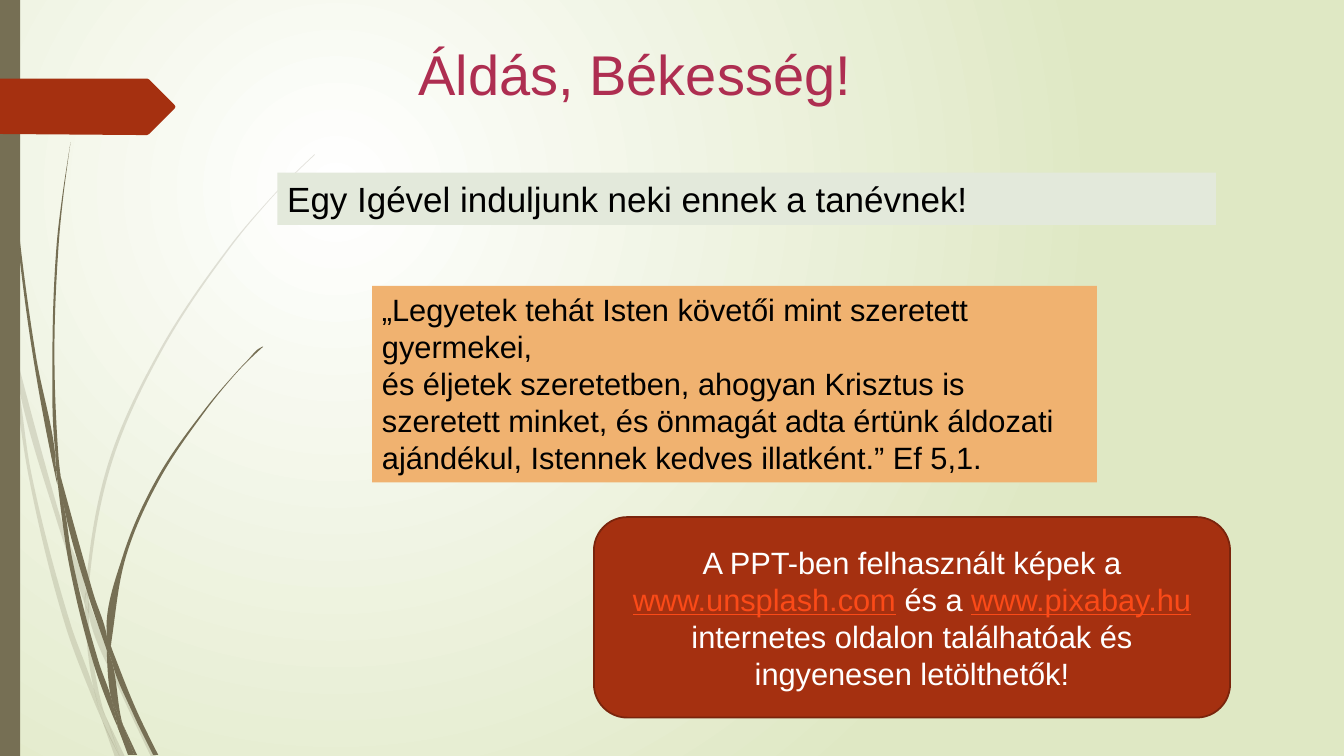
import math
from lxml import etree
from pptx import Presentation
from pptx import util as u
from pptx.dml.color import RGBColor
from pptx.enum import shapes, text
from pptx.oxml.ns import qn

# Theme: colours and type sizes
THEME = {
    "font": "Arial", "serif": "Times New Roman",
    "bark": "766F54", "rust": "A53010", "edge": "7A240C", "peach": "F0B270",
    "mist": "E3E9DB", "rose": "AE2E51", "link": "FB4A18",
    "ink": "000000", "white": "FFFFFF", "leaf": "DFE8C4",
    "title": 40, "lead": 25, "body": 22,
}

# Content: paragraphs are lists of (words, colour) runs
TITLE = [[(" ", "rose"), ("Áldás, Békesség!", "rose")]]
LEAD = [[("Egy Igével induljunk neki ennek a tanévnek!", "ink")]]
QUOTE = [
    [("„Legyetek tehát Isten követői mint szeretett gyermekei,", "ink")],
    [("és éljetek szeretetben, ahogyan Krisztus is szeretett minket, és önmagát "
      "adta értünk áldozati ajándékul, Istennek kedves illatként.” Ef 5,1.", "ink")],
]
NOTE = [[
    ("A PPT-ben felhasznált képek a ", "white"), ("www.unsplash.com", "link"),
    (" és a ", "white"), ("www.pixabay.hu", "link"),
    (" internetes oldalon találhatóak és ingyenesen letölthetők!", "white"),
]]

# Places: left, top, width, height in percent of the slide
WIDE, HIGH = u.Inches(13.33), u.Inches(7.5)
SPOT = {
    "bar": (0, 0, 1.5, 100),
    "title": (21.68, 4.53, 50.04, 10.27), "lead": (20.63, 22.83, 69.84, 6.93),
    "quote": (27.68, 37.8, 53.94, 26), "note": (44.19, 68.4, 47.34, 26.53),
}

# Outlines: x, y pairs in hundredths of an inch
FLAG = (0, 78, 146, 78, 148, 79, 173, 104, 174, 106, 173, 108, 148, 133, 146, 134,
        136, 134, 0, 133)
FAINT = [
    (11, 350, 9, 322, 0, 282, 0, 299, 10, 344),
    (58, 522, 84, 599, 85, 586, 62, 520, 14, 345, 17, 376),
    (92, 607, 88, 596, 88, 610, 123, 694, 150, 751, 155, 751, 127, 692),
    (119, 751, 124, 751, 105, 711),
    (93, 683, 70, 619, 31, 469, 17, 376, 11, 350, 28, 470, 65, 621, 92, 693,
     101, 714, 99, 707),
    (84, 599, 87, 646, 93, 683, 96, 692, 105, 711, 103, 706, 91, 646, 88, 610, 88, 608),
    (88, 584, 110, 462, 160, 349, 229, 245, 268, 198, 290, 175, 312, 154, 312, 153,
     289, 175, 268, 197, 228, 244, 158, 348, 107, 461, 85, 584, 85, 586, 88, 596),
    (101, 714, 114, 751, 119, 751),
    (88, 608, 88, 610, 88, 596, 85, 586, 84, 599),
    (96, 692, 93, 683, 99, 707, 101, 714, 119, 751, 105, 711),
]
SOLID = [
    (7, 110, 17, 233, 33, 355, 56, 477, 57, 481, 55, 457, 55, 453, 36, 355, 19, 232,
     8, 109, 5, 48, 4, 0, 3, 0, 4, 48),
    (88, 592, 106, 645, 106, 633, 106, 631, 93, 590, 60, 472, 64, 505),
    (113, 649, 110, 641, 111, 656, 132, 708, 152, 749, 157, 749, 136, 706),
    (110, 691, 98, 657, 72, 556, 64, 505, 57, 477, 68, 557, 93, 659, 111, 708,
     117, 722, 116, 717),
    (60, 472, 58, 453, 54, 349, 58, 245, 63, 193, 70, 141, 62, 193, 56, 245,
     52, 349, 55, 449),
    (133, 749, 136, 749, 122, 719),
    (57, 477, 64, 505, 60, 472, 55, 449, 55, 453),
    (111, 633, 125, 552, 158, 476, 205, 406, 231, 374, 245, 359, 261, 344, 260, 344,
     245, 358, 231, 373, 204, 405, 156, 474, 122, 551, 106, 631, 110, 641),
    (117, 722, 127, 749, 131, 749),
    (106, 645, 110, 691, 116, 706, 122, 719, 121, 716, 111, 656, 109, 651),
    (106, 645, 109, 651, 111, 656, 110, 641, 106, 631, 106, 633),
    (116, 706, 110, 691, 116, 717, 117, 722, 130, 749, 133, 749, 122, 719),
]


def tint(name):
    return RGBColor.from_string(THEME[name])


def place(name):
    return [round(side * part / 100)
            for side, part in zip((WIDE, HIGH, WIDE, HIGH), SPOT[name])]


def paint(shape, fill, line=None):
    shape.shadow.inherit = False
    shape.fill.solid()
    shape.fill.fore_color.rgb = tint(fill)
    if line:
        shape.line.color.rgb = tint(line)
        shape.line.width = u.Pt(1.25)
    else:
        shape.line.fill.background()


def write(shape, paras, size, align=text.PP_ALIGN.LEFT, anchor=text.MSO_ANCHOR.TOP):
    frame = shape.text_frame
    form = {"word_wrap": True, "vertical_anchor": anchor,
            "auto_size": text.MSO_AUTO_SIZE.NONE}
    for key, val in form.items():
        setattr(frame, key, val)
    for i, runs in enumerate(paras):
        para = frame.add_paragraph() if i else frame.paragraphs[0]
        para.alignment = align
        for words, hue in runs:
            run = para.add_run()
            run.text = words
            look = {"name": THEME["font" if words.strip() else "serif"],
                    "size": u.Pt(THEME[size]), "underline": hue == "link"}
            for key, val in look.items():
                setattr(run.font, key, val)
            run.font.color.rgb = tint(hue)


def unit(a, b):
    span = math.dist(a, b) or 1
    return (b[0] - a[0]) / span, (b[1] - a[1]) / span


def lean(a, b, c):
    """Direction of the outline at b; none at a sharp corner."""
    (p, q), (r, s) = unit(a, b), unit(b, c)
    return unit((0, 0), (p + r, q + s)) if p * r + q * s > 0.7 else (0, 0)


def bend(shape):
    """Turn the straight sides of an outline into smooth curves."""
    sides = list(shape.element.iter(qn("a:lnTo")))
    dots = [(int(s[0].get("x")), int(s[0].get("y"))) for s in sides]
    aims = [lean(dots[i - 1], dot, dots[(i + 1) % len(dots)])
            for i, dot in enumerate(dots)]
    for i, side in enumerate(sides):
        a, b = dots[i - 1], dots[i]
        reach = math.dist(a, b) / 3
        side.tag = qn("a:cubicBezTo")
        for n, (dot, aim, way) in enumerate(((a, aims[i - 1], 1), (b, aims[i], -1))):
            x, y = (round(d + way * reach * m) for d, m in zip(dot, aim))
            side.insert(n, etree.Element(qn("a:pt"), x=str(x), y=str(y)))


def trace(slide, flat, fill, smooth=True, alpha=None):
    dots = [(u.Inches(x / 100), u.Inches(y / 100))
            for x, y in zip(flat[::2], flat[1::2])]
    pen = slide.shapes.build_freeform(*dots[0])
    pen.add_line_segments(dots[1:] + dots[:1], close=True)
    shape = pen.convert_to_shape()
    paint(shape, fill)
    if smooth:
        # Rebuild the tags so that the tree holds plain curve elements
        bend(shape)
    if alpha:
        hue = next(shape.element.iter(qn("a:srgbClr")))
        etree.SubElement(hue, qn("a:alpha"), val=str(alpha * 1000))


def ground(slide):
    fill = slide.background.fill
    fill.gradient()
    for stop, hue, pos in zip(fill.gradient_stops, ("white", "leaf"), (0, 1)):
        stop.color.rgb = tint(hue)
        stop.position = pos
    grad = next(slide.element.iter(qn("a:gradFill")))
    grad.remove(grad.find(qn("a:lin")))
    ring = etree.SubElement(grad, qn("a:path"))
    ring.set("path", "circle")
    etree.SubElement(ring, qn("a:fillToRect"),
                     l="50000", t="50000", r="100000", b="100000")


def main():
    deck = Presentation()
    deck.slide_width, deck.slide_height = WIDE, HIGH
    slide = deck.slides.add_slide(deck.slide_layouts[5])
    ground(slide)
    # Grass at the left
    for blades, alpha in ((FAINT, 20), (SOLID, None)):
        for flat in blades:
            trace(slide, flat, "bark", alpha=alpha)
    # Bar, flag and text panels
    kind = shapes.MSO_SHAPE
    panels = {}
    for name, form, fill, line in (
            ("bar", kind.RECTANGLE, "bark", None),
            ("quote", kind.RECTANGLE, "peach", None),
            ("lead", kind.RECTANGLE, "mist", None),
            ("note", kind.ROUNDED_RECTANGLE, "rust", "edge")):
        panels[name] = slide.shapes.add_shape(form, *place(name))
        paint(panels[name], fill, line)
    trace(slide, FLAG, "rust", smooth=False)
    # Words
    head = slide.shapes.title
    for key, val in zip(("left", "top", "width", "height"), place("title")):
        setattr(head, key, val)
    mid = text.PP_ALIGN.CENTER
    write(head, TITLE, "title", mid)
    write(panels["quote"], QUOTE, "body")
    write(panels["lead"], LEAD, "lead")
    write(panels["note"], NOTE, "body", mid, text.MSO_ANCHOR.MIDDLE)
    deck.save("out.pptx")


if __name__ == "__main__":
    main()
